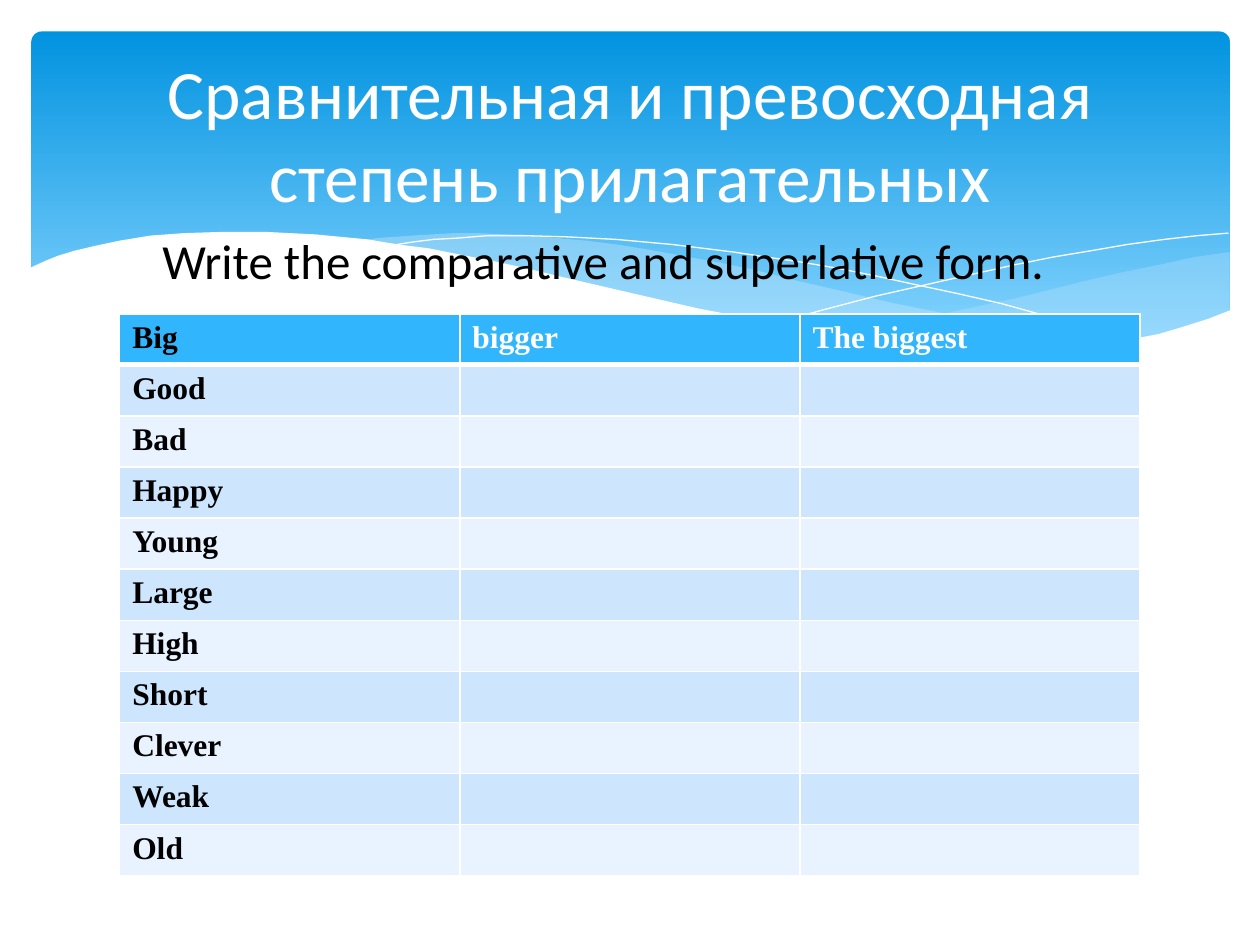
from lxml import etree
from pptx import Presentation, util as u
from pptx.dml.color import RGBColor
from pptx.enum import shapes, text
from pptx.oxml.ns import qn

COLORS = {
    "white": "FFFFFF", "black": "000000", "sky_top": "0293E0", "sky_bottom": "83D3FE",
    "band": "C6E7FC", "header": "31B6FD", "odd": "CEE5FE", "even": "E8F3FF",
}
TITLE = "Сравнительная и превосходная степень прилагательных"
TASK = "Write the comparative and superlative form."
HEADER = ["Big", "bigger", "The biggest"]
ADJECTIVES = ["Good", "Bad", "Happy", "Young", "Large", "High", "Short", "Clever", "Weak", "Old"]

# Wave outlines: x, y in inches
RIGHT_BAND = [
    (9.76, 2), (9.48, 2.04), (9.21, 2.1), (8.91, 2.16), (8.61, 2.23), (8.05, 2.37),
    (7.53, 2.48), (7.06, 2.57), (6.61, 2.65), (6.91, 2.69), (7.19, 2.72), (7.45, 2.75),
    (7.69, 2.77), (8.03, 2.78), (8.35, 2.77), (8.63, 2.75), (8.89, 2.72), (9.13, 2.67),
    (9.35, 2.62), (9.49, 2.57), (9.63, 2.52), (9.76, 2.47),
]
MIDDLE_BAND = [
    (8.93, 2.73), (8.66, 2.69), (8.37, 2.65), (8.07, 2.6), (7.75, 2.54), (7.41, 2.47),
    (7.06, 2.4), (6.68, 2.31), (6.29, 2.22), (5.98, 2.14), (5.69, 2.08), (5.41, 2.03),
    (5.14, 1.98), (4.89, 1.94), (4.65, 1.91), (4.42, 1.89), (4.2, 1.87), (3.99, 1.86),
    (3.8, 1.85), (3.61, 1.85), (3.28, 1.87), (2.99, 1.89), (2.86, 1.91), (3.23, 1.96),
    (3.62, 2.03), (4.04, 2.11), (4.49, 2.22), (4.91, 2.32), (5.3, 2.4), (5.66, 2.48),
    (6.01, 2.55), (6.34, 2.61), (6.65, 2.66), (6.95, 2.7), (7.22, 2.74), (7.48, 2.76),
    (7.73, 2.77), (7.96, 2.78), (8.28, 2.78), (8.57, 2.77), (8.76, 2.75),
]
FALLING_LINE = [
    (3.09, 1.95), (3.28, 1.92), (3.44, 1.9), (3.63, 1.89), (3.87, 1.87), (4.16, 1.87),
    (4.5, 1.88), (4.89, 1.9), (5.33, 1.94), (5.82, 2), (6.08, 2.04), (6.36, 2.08),
    (6.65, 2.13), (6.95, 2.19), (7.27, 2.26), (7.6, 2.33), (7.95, 2.41), (8.31, 2.51),
    (8.69, 2.61), (9.07, 2.72),
]
RISING_LINE = [
    (6.13, 2.57), (6.53, 2.46), (6.95, 2.35), (7.48, 2.23), (8.06, 2.1), (8.36, 2.04),
    (8.66, 1.99), (8.95, 1.94), (9.24, 1.9), (9.51, 1.87), (9.75, 1.85),
]
WHITE_WAVE = [
    (9.77, 2.46), (9.59, 2.53), (9.4, 2.59), (9.2, 2.65), (8.99, 2.69), (8.75, 2.73),
    (8.5, 2.75), (8.23, 2.77), (7.93, 2.76), (7.61, 2.75), (7.26, 2.72), (6.88, 2.68),
    (6.48, 2.62), (6.03, 2.54), (5.55, 2.45), (5.03, 2.33), (4.47, 2.2), (4.18, 2.13),
    (3.91, 2.07), (3.65, 2.02), (3.4, 1.97), (3.16, 1.94), (2.92, 1.9), (2.71, 1.88),
    (2.5, 1.86), (2.3, 1.85), (2.11, 1.84), (1.77, 1.84), (1.46, 1.85), (1.19, 1.87),
    (0.95, 1.91), (0.76, 1.95), (0.59, 1.99), (0.46, 2.03), (0.36, 2.07), (0.23, 2.13),
    (0.23, 3.29), (9.77, 3.29),
]
# points, fill colour (None for an open line), opacity in percent
WAVES = [
    (RIGHT_BAND, "band", 29), (MIDDLE_BAND, "band", 40),
    (FALLING_LINE, None, 100), (RISING_LINE, None, 100), (WHITE_WAVE, "white", 100),
]


def rgb(name):
    return RGBColor.from_string(COLORS[name])


def inch(value):
    return u.Cm(value * 2.54)


def box(*lengths):
    return [inch(v) for v in lengths]


def paint(fill, name, opacity=100):
    fill.solid()
    fill.fore_color.rgb = rgb(name)
    if opacity < 100:
        clr = fill._xPr.find(".//" + qn("a:srgbClr"))
        etree.SubElement(clr, qn("a:alpha"), val=str(opacity * 1000))


def write(tf, words, color, align=None, **font):
    p = tf.paragraphs[0]
    p.alignment = align
    r = p.add_run()
    r.text = words
    r.font.color.rgb = rgb(color)
    for key, value in font.items():
        setattr(r.font, key, value)


def add_sky(s):
    sp = s.shapes.add_shape(shapes.MSO_SHAPE.ROUNDED_RECTANGLE, *box(0.25, 0.25, 9.51, 2.7))
    sp.adjustments[0] = 0.03
    sp.shadow.inherit = False
    sp.line.fill.background()
    sp.fill.gradient()
    sp.fill.gradient_angle = 270
    for stop, name, pos in zip(sp.fill.gradient_stops, ("sky_top", "sky_bottom"), (0, 0.9)):
        stop.color.rgb = rgb(name)
        stop.position = pos


def add_wave(s, points, fill, opacity):
    pts = [box(*pt) for pt in points]
    builder = s.shapes.build_freeform(*pts[0])
    builder.add_line_segments(pts[1:], close=fill is not None)
    sp = builder.convert_to_shape()
    sp.shadow.inherit = False
    if fill:
        paint(sp.fill, fill, opacity)
        sp.line.fill.background()
    else:
        sp.fill.background()
        sp.line.color.rgb = rgb("white")
        sp.line.width = 0


def set_borders(cell, bottom):
    """White borders, 1 pt except for the bottom one; they go before the fill."""
    tc_pr = cell._tc.get_or_add_tcPr()
    widths = {"lnL": 1, "lnR": 1, "lnT": 1, "lnB": bottom}
    for i, (side, width) in enumerate(widths.items()):
        ln = etree.Element(qn("a:" + side), w=str(u.Pt(width)))
        solid = etree.SubElement(ln, qn("a:solidFill"))
        etree.SubElement(solid, qn("a:srgbClr"), val=COLORS["white"])
        tc_pr.insert(i, ln)


def add_adjectives(s):
    rows = [HEADER] + [[word, "", ""] for word in ADJECTIVES]
    table = s.shapes.add_table(len(rows), len(HEADER), *box(0.95, 2.49, 8.1, 4.46)).table
    for i, row in enumerate(rows):
        fill = "header" if i == 0 else "odd" if i % 2 else "even"
        for j, word in enumerate(row):
            cell = table.cell(i, j)
            paint(cell.fill, fill)
            set_borders(cell, 3 if i == 0 else 1)
            if word:
                write(cell.text_frame, word, "white" if j else "black",
                      size=u.Pt(18), bold=True, name="Times New Roman")


def place_title(s):
    title = s.shapes.title
    s.shapes._spTree.append(title._element)  # in front of the waves
    title.left, title.top, title.width, title.height = box(0.5, 0.37, 9, 1.37)
    tf = title.text_frame
    tf.auto_size = text.MSO_AUTO_SIZE.NONE
    tf.vertical_anchor = text.MSO_ANCHOR.MIDDLE
    write(tf, TITLE, "white", text.PP_ALIGN.CENTER, size=u.Pt(39.6), name="Calibri")


def add_task(s):
    tf = s.shapes.add_textbox(*box(1.19, 1.78, 7.87, 0.57)).text_frame
    tf.word_wrap = True
    tf.auto_size = text.MSO_AUTO_SIZE.SHAPE_TO_FIT_TEXT
    write(tf, TASK, "black", size=u.Pt(28), name="Calibri")


def main():
    prs = Presentation()
    prs.slide_width, prs.slide_height = box(10, 7.5)
    s = prs.slides.add_slide(prs.slide_layouts[5])
    add_sky(s)
    for wave in WAVES:
        add_wave(s, *wave)
    add_adjectives(s)
    place_title(s)
    add_task(s)
    prs.save("out.pptx")


if __name__ == "__main__":
    main()
